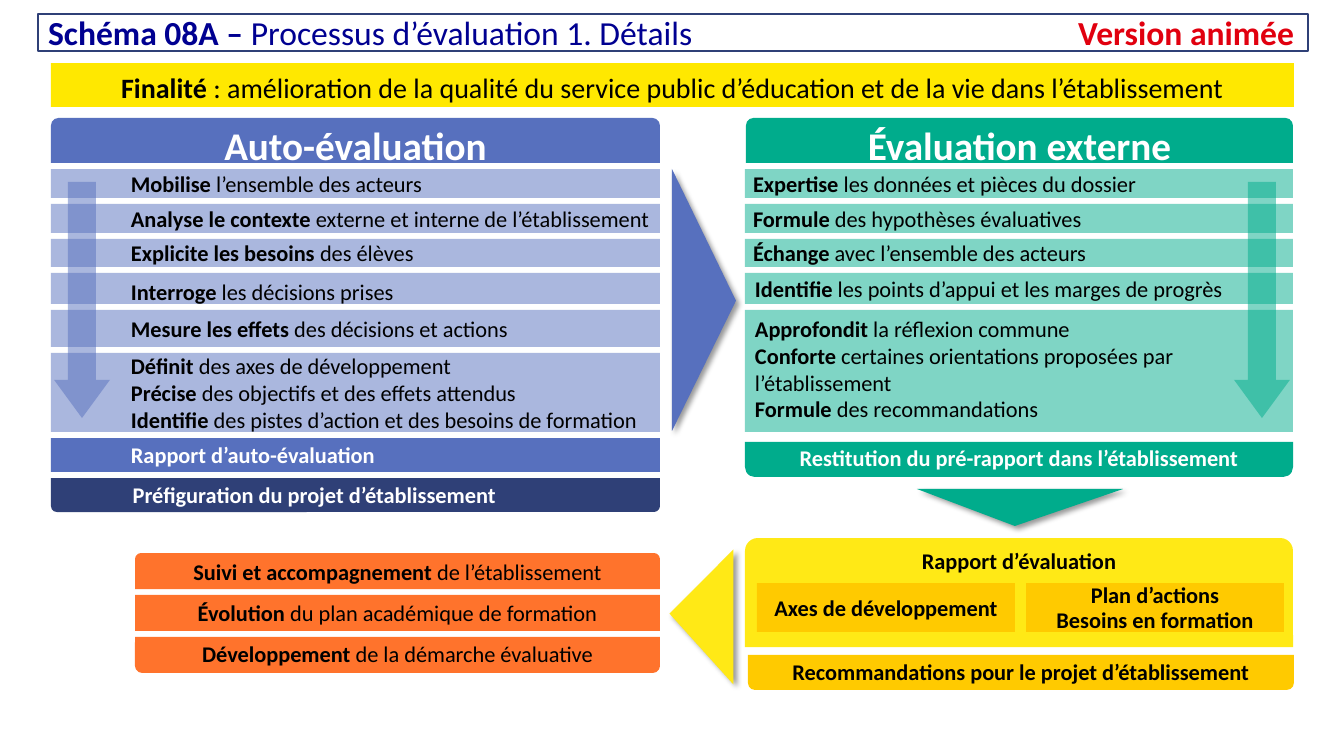
"""Build the slide on the evaluation process of a school."""
from lxml.etree import SubElement
from pptx import Presentation
from pptx.dml.color import RGBColor
from pptx.enum.shapes import MSO_SHAPE as SHAPE
from pptx.enum.text import MSO_ANCHOR as ANCHOR, MSO_AUTO_SIZE as AUTO, PP_ALIGN as ALIGN
from pptx.oxml.ns import qn
from pptx.util import Pt

PX = 12192000 / 1344
FONT = "Calibri"
BLUE, NAVY, GREEN = "5770BE", "2F4077", "00AC8C"
YELLOW, LEMON, GOLD, ORANGE = "FFE800", "FFE916", "FFCA00", "FF732C"
BLACK, WHITE = "000000", "FFFFFF"
RECT, ROUND = SHAPE.RECTANGLE, SHAPE.ROUND_2_SAME_RECTANGLE
TOP, MIDDLE = ANCHOR.TOP, ANCHOR.MIDDLE
LEFT, CENTER = ALIGN.LEFT, ALIGN.CENTER
GAP = 6

TITLE = [("Schéma 08A – ", True, "000091"),
         ("Processus d’évaluation 1. Détails\t", False, "000091"),
         ("Version animée", True, "E1000F")]
PURPOSE = ("Finalité| : amélioration de la qualité du service public "
           "d’éducation et de la vie dans l’établissement")

# Each row: height, anchor, side inset, lines with bold text before the bar
SELF_ROWS = [
    (29, MIDDLE, 10, ["Mobilise| l’ensemble des acteurs"]),
    (29, MIDDLE, 10, ["Analyse le contexte| externe et interne de l’établissement"]),
    (28, MIDDLE, 10, ["Explicite les besoins| des élèves"]),
    (31, TOP, 10, ["Interroge| les décisions prises"]),
    (37, TOP, 10, ["Mesure les effets| des décisions et actions"]),
    (79, MIDDLE, 10, ["Définit| des axes de développement",
                      "Précise| des objectifs et des effets attendus",
                      "Identifie| des pistes d’action et des besoins de formation"]),
]
EXTERNAL_ROWS = [
    (29, MIDDLE, 8, ["Expertise| les données et pièces du dossier"]),
    (29, MIDDLE, 8, ["Formule| des hypothèses évaluatives"]),
    (28, MIDDLE, 8, ["Échange| avec l’ensemble des acteurs"]),
    (31, MIDDLE, 10, ["Identifie| les points d’appui et les marges de progrès"]),
    (122, TOP, 10, ["Approfondit| la réflexion commune",
                    "Conforte| certaines orientations proposées par l’établissement",
                    "Formule| des recommandations"]),
]
SELF_RESULTS = [("Rapport d’auto-évaluation", RECT, BLUE, ()),
                ("Préfiguration du projet d’établissement", ROUND, NAVY, (0, 0.174))]
FOLLOW_UP = [("Suivi et accompagnement| de l’établissement", ROUND, ()),
             ("Évolution| du plan académique de formation", RECT, ()),
             ("Développement| de la démarche évaluative", ROUND, (0, 0.198))]
REPORT_PARTS = [(["Axes de développement"], None),
                (["Plan d’actions", "Besoins en formation"], Pt(18))]
DOWN_ARROWS = [(54, BLUE), (1234, GREEN)]
TRIANGLES = [((573, 268, 262, 64), 90, 0.503, BLUE),
             ((917, 489, 206, 37), 180, 0.525, GREEN),
             ((634, 585, 135, 64), 270, 0.525, LEMON)]


def px(n):
    """Turn px into EMU."""
    return round(n * PX)


def color(value):
    """Turn a hex string into a colour."""
    return RGBColor.from_string(value)


def draw(kind, place, fill, adj=(), alpha=None):
    """Add a filled shape without line or inherited shadow."""
    s = shapes.add_shape(kind, *map(px, place))
    s.shadow.inherit = False
    s.line.fill.background()
    s.fill.solid()
    s.fill.fore_color.rgb = color(fill)
    for i, value in enumerate(adj):
        s.adjustments[i] = value
    if alpha:
        clr = s._element.spPr.find(qn("a:solidFill"))[0]
        SubElement(clr, qn("a:alpha"), val=str(alpha * 1000))
    return s


def write(s, lines, size=16, ink=BLACK, align=CENTER, anchor=MIDDLE,
          inset=10, indent=0, spacing=None):
    """Write lines in a shape, bold up to the bar."""
    tf = s.text_frame
    tf.word_wrap = True
    tf.vertical_anchor = anchor
    tf.margin_left = tf.margin_right = px(inset)
    tf.margin_top = tf.margin_bottom = px(5)
    for i, line in enumerate(lines):
        p = tf.add_paragraph() if i else tf.paragraphs[0]
        p.alignment = align
        p.font.name, p.font.size = FONT, Pt(size)
        p.font.color.rgb = color(ink)
        if spacing:
            p.line_spacing = spacing
        if indent:
            p._p.get_or_add_pPr().set("marL", str(px(indent)))
        for j, part in enumerate(line.split("|")):
            r = p.add_run()
            r.text, r.font.bold = part, j == 0


def stack(rows, x, w, fill, indent=0):
    """Draw the translucent rows of one column."""
    y = 169
    for h, anchor, inset, lines in rows:
        s = draw(RECT, (x, y, w, h), fill, alpha=50)
        write(s, lines, align=LEFT, anchor=anchor, inset=inset, indent=indent)
        y += h + GAP
    return y


def fill_title(s):
    """Place and format the title with its right-hand note."""
    s.left, s.top, s.width, s.height = map(px, (38, 14, 1270, 37))
    s.line.color.rgb, s.line.width = color(NAVY), Pt(1)
    tf = s.text_frame
    tf.auto_size, tf.vertical_anchor, tf.word_wrap = AUTO.NONE, MIDDLE, True
    p = tf.paragraphs[0]
    p.alignment = LEFT
    p.font.name, p.font.size = FONT, Pt(24)
    tabs = SubElement(p._p.get_or_add_pPr(), qn("a:tabLst"))
    p._p.pPr.insert(0, tabs)
    SubElement(tabs, qn("a:tab"), pos=str(px(1246)), algn="r")
    for text, bold, ink in TITLE:
        r = p.add_run()
        r.text, r.font.bold = text, bold
        r.font.color.rgb = color(ink)


prs = Presentation()
prs.slide_width, prs.slide_height = px(1344), px(756)
slide = prs.slides.add_slide(prs.slide_layouts[5])
shapes = slide.shapes
fill_title(shapes.title)

write(draw(RECT, (51, 63, 1243, 44), YELLOW), [PURPOSE], size=20, spacing=1.15)
for name, x, w, fill in [("Auto-évaluation", 51, 609, BLUE),
                         ("Évaluation externe", 746, 547, GREEN)]:
    write(draw(ROUND, (x, 118, w, 45), fill), [name], size=28, ink=WHITE, spacing=1.15)

y = stack(SELF_ROWS, 51, 609, BLUE, indent=70)
for text, kind, fill, adj in SELF_RESULTS:
    s = draw(kind, (51, y, 609, 34), fill, adj)
    write(s, [text], ink=WHITE, align=LEFT, indent=70)
    y += 34 + GAP

stack(EXTERNAL_ROWS, 745, 548, GREEN)
write(draw(ROUND, (745, 442, 548, 35), GREEN, (0, 0.279)),
      ["Restitution du pré-rapport dans l’établissement"], ink=WHITE)

for i, (text, kind, adj) in enumerate(FOLLOW_UP):
    write(draw(kind, (135, 553 + i * (36 + GAP), 525, 36), ORANGE, adj), [text], inset=4)

write(draw(ROUND, (745, 538, 548, 109), LEMON, (0.117, 0)),
      ["Rapport d’évaluation"], anchor=TOP)
for i, (lines, spacing) in enumerate(REPORT_PARTS):
    write(draw(RECT, (757 + i * 269, 583, 258, 49), GOLD), lines, spacing=spacing)
write(draw(ROUND, (748, 655, 546, 35), GOLD, (0, 0.203)),
      ["Recommandations pour le projet d’établissement"])

for x, fill in DOWN_ARROWS:
    draw(SHAPE.DOWN_ARROW, (x, 182, 56, 236), fill, (0.5, 0.682), alpha=50)
for place, angle, tip, fill in TRIANGLES:
    s = draw(SHAPE.ISOSCELES_TRIANGLE, place, fill, (tip,))
    s.rotation = angle
    shadow = SubElement(s._element.spPr.find(qn("a:effectLst")), qn("a:outerShdw"),
                        blurRad=str(Pt(4)), dist=str(Pt(3)), dir="2700000",
                        algn="tl", rotWithShape="0")
    SubElement(SubElement(shadow, qn("a:srgbClr"), val=BLACK), qn("a:alpha"), val="40000")

prs.save("out.pptx")
